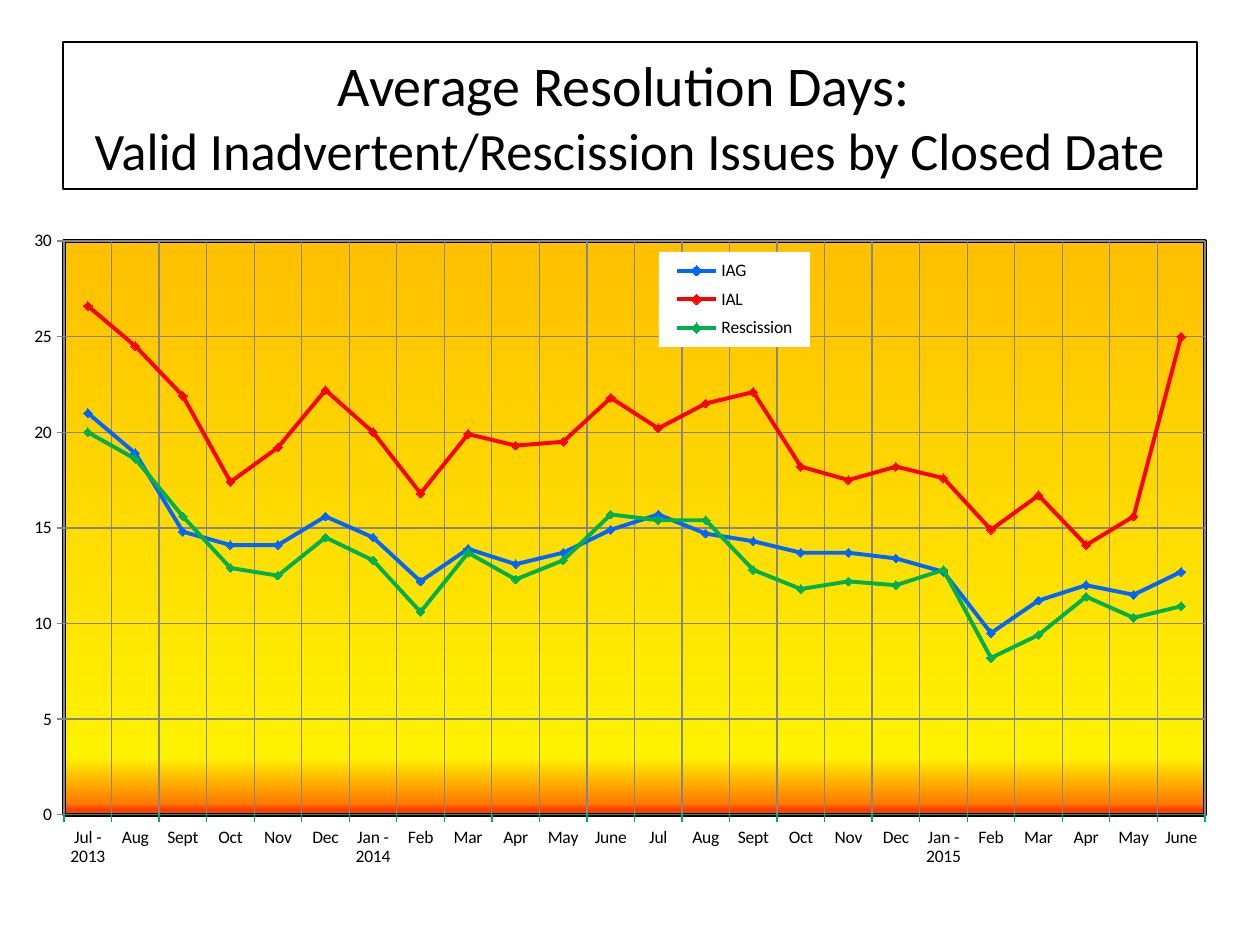
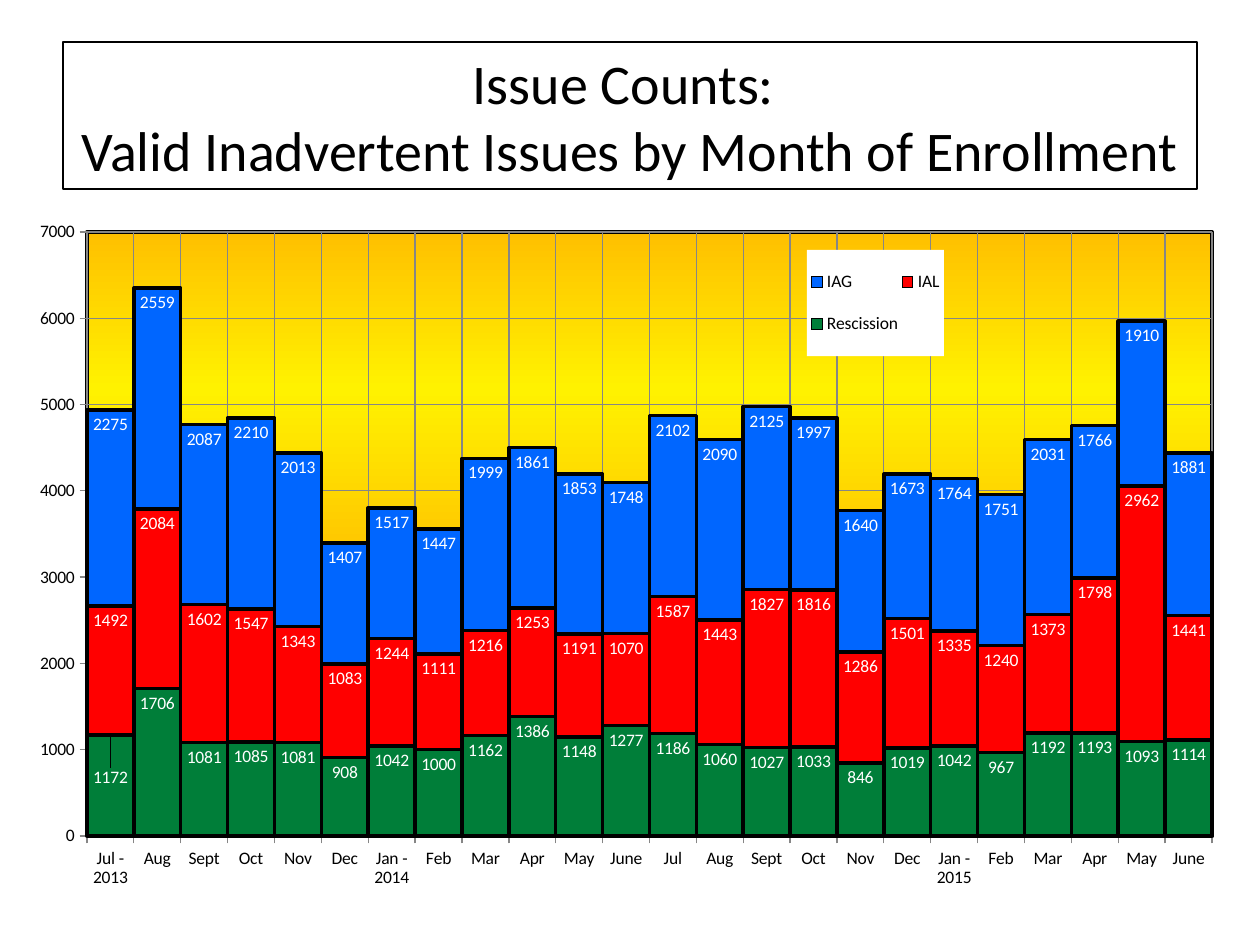
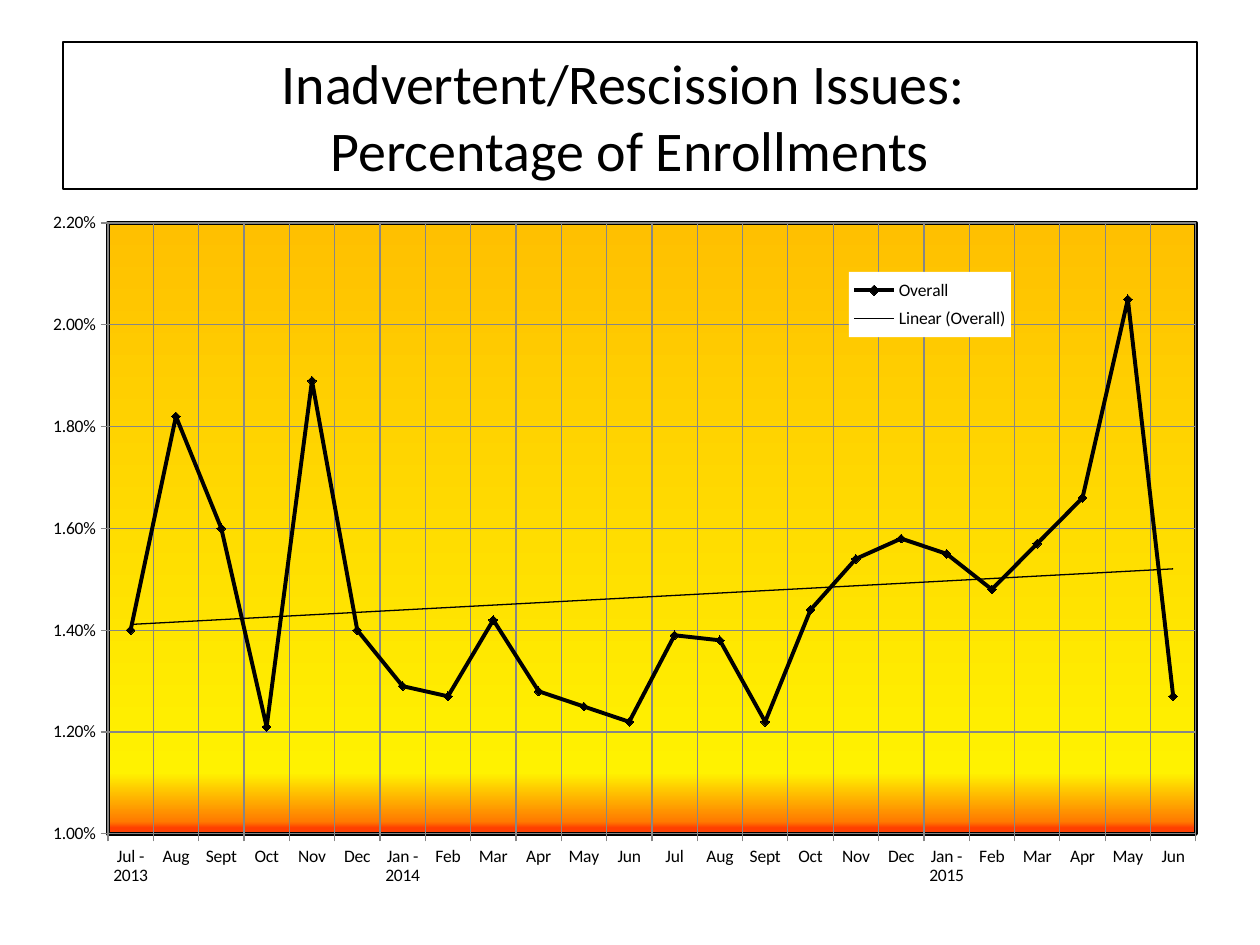
import copy

import pptx
import pptx.chart.data
import pptx.dml.color
import pptx.enum.chart
import pptx.enum.text
import pptx.oxml
import pptx.oxml.ns
import pptx.util

AUTUMN = ["Aug", "Sept", "Oct", "Nov", "Dec"]
SPRING = ["Feb", "Mar", "Apr", "May"]

IAG_BLUE = "0066FF"
IAL_RED = "FF0000"

AVERAGE_DAYS = [
    ("IAG", IAG_BLUE, [21, 18.9, 14.8, 14.1, 14.1, 15.6, 14.5, 12.2, 13.9, 13.1, 13.7, 14.9,
                       15.7, 14.7, 14.3, 13.7, 13.7, 13.4, 12.7, 9.5, 11.2, 12, 11.5, 12.7]),
    ("IAL", IAL_RED, [26.6, 24.5, 21.9, 17.4, 19.2, 22.2, 20, 16.8, 19.9, 19.3, 19.5, 21.8,
                      20.2, 21.5, 22.1, 18.2, 17.5, 18.2, 17.6, 14.9, 16.7, 14.1, 15.6, 25]),
    ("Rescission", "00B050", [20, 18.6, 15.6, 12.9, 12.5, 14.5, 13.3, 10.6, 13.7, 12.3, 13.3, 15.7,
                              15.4, 15.4, 12.8, 11.8, 12.2, 12, 12.8, 8.2, 9.4, 11.4, 10.3, 10.9]),
]
ISSUE_COUNTS = [
    ("Rescission", "007E39", [1172, 1706, 1081, 1085, 1081, 908, 1042, 1000, 1162, 1386, 1148, 1277,
                              1186, 1060, 1027, 1033, 846, 1019, 1042, 967, 1192, 1193, 1093, 1114]),
    ("IAL", IAL_RED, [1492, 2084, 1602, 1547, 1343, 1083, 1244, 1111, 1216, 1253, 1191, 1070,
                      1587, 1443, 1827, 1816, 1286, 1501, 1335, 1240, 1373, 1798, 2962, 1441]),
    ("IAG", IAG_BLUE, [2275, 2559, 2087, 2210, 2013, 1407, 1517, 1447, 1999, 1861, 1853, 1748,
                       2102, 2090, 2125, 1997, 1640, 1673, 1764, 1751, 2031, 1766, 1910, 1881]),
]
ENROLLMENT_SHARE = [
    ("Overall", "000000", [0.0140, 0.0182, 0.0160, 0.0121, 0.0189, 0.0140, 0.0129, 0.0127,
                           0.0142, 0.0128, 0.0125, 0.0122, 0.0139, 0.0138, 0.0122, 0.0144,
                           0.0154, 0.0158, 0.0155, 0.0148, 0.0157, 0.0166, 0.0205, 0.0127]),
]


def months(june):
    return ["Jul - 2013", *AUTUMN, "Jan - 2014", *SPRING, june,
            "Jul", *AUTUMN, "Jan - 2015", *SPRING, june]


def rgb(value):
    return pptx.dml.color.RGBColor.from_string(value)


def px(length):
    return round(length * 914400 / 126)


def qn(tag):
    return pptx.oxml.ns.qn(tag)


def xml(tag, body):
    return pptx.oxml.parse_xml(f"<{tag} {pptx.oxml.ns.nsdecls('c', 'a')}>{body}</{tag}>")


def solid(color):
    return f'<a:solidFill><a:srgbClr val="{color}"/></a:solidFill>'


class Deck:
    font = "Calibri"
    ink = "000000"
    paper = "FFFFFF"
    grid = "868686"

    def __init__(self):
        self.presentation = pptx.Presentation()
        self.presentation.slide_width = px(1260)
        self.presentation.slide_height = px(945)
        self.slide = None

    def add_slide(self, heading, subject, subject_size=32):
        self.slide = self.presentation.slides.add_slide(self.presentation.slide_layouts[5])
        title = self.slide.shapes.title
        title.left, title.top, title.width, title.height = map(px, (63, 42, 1134, 147))
        self.outline(title.line, self.ink, 0.75)
        frame = title.text_frame
        frame.text = f"{heading} \v{subject}"
        frame.word_wrap = True
        frame.auto_size = pptx.enum.text.MSO_AUTO_SIZE.NONE
        frame.vertical_anchor = pptx.enum.text.MSO_ANCHOR.MIDDLE
        paragraph = frame.paragraphs[0]
        paragraph.alignment = pptx.enum.text.PP_ALIGN.CENTER
        for run, size in zip(paragraph.runs, (32, subject_size)):
            self.style_font(run.font, size, self.ink)
        line_break = paragraph._p.find(qn("a:br"))
        line_break.append(copy.deepcopy(paragraph.runs[0]._r.find(qn("a:rPr"))))

    def style_font(self, font, size, color):
        font.name = self.font
        font.size = pptx.util.Pt(size)
        font.color.rgb = rgb(color)

    def outline(self, line, color, width):
        line.color.rgb = rgb(color)
        line.width = pptx.util.Pt(width)

    def add_chart(self, kind, box, plot_box, legend_box, categories, series,
                  scale, number_format="General", yellow_stop=90, axis_color=None):
        data = pptx.chart.data.CategoryChartData(number_format=number_format)
        data.categories = categories
        for name, _, values in series:
            data.add_series(name, values)
        chart = self.slide.shapes.add_chart(kind, *map(px, box), data).chart
        chart.has_title = False
        self.style_font(chart.font, 10, self.ink)
        chart.plots[0].vary_by_categories = False
        self.style_axes(chart, scale, number_format, axis_color or self.grid)
        self.style_plot_area(chart, box, plot_box, yellow_stop)
        self.add_legend(chart, box, legend_box)
        return chart

    def style_axes(self, chart, scale, number_format, axis_color):
        value_axis = chart.value_axis
        value_axis.minimum_scale, value_axis.maximum_scale, value_axis.major_unit = scale
        value_axis.tick_labels.number_format = number_format
        value_axis.tick_labels.number_format_is_linked = False
        for axis, color in ((value_axis, self.grid), (chart.category_axis, axis_color)):
            axis.has_major_gridlines = True
            axis.major_tick_mark = pptx.enum.chart.XL_TICK_MARK.OUTSIDE
            axis.minor_tick_mark = pptx.enum.chart.XL_TICK_MARK.NONE
            self.outline(axis.major_gridlines.format.line, self.grid, 0.75)
            self.outline(axis.format.line, color, 0.75)

    def layout(self, box, inner_box, target=""):
        left, top, width, height = box
        x, y, w, h = inner_box
        fractions = {"x": (x - left) / width, "y": (y - top) / height,
                     "w": w / width, "h": h / height}
        places = "".join(f'<c:{key} val="{value:.4f}"/>' for key, value in fractions.items())
        modes = '<c:xMode val="edge"/><c:yMode val="edge"/>'
        return xml("c:layout", f"<c:manualLayout>{target}{modes}{places}</c:manualLayout>")

    def drop_layout(self, parent):
        for old_layout in parent.findall(qn("c:layout")):
            parent.remove(old_layout)

    def style_plot_area(self, chart, box, plot_box, yellow_stop):
        area = chart.element.find(".//" + qn("c:plotArea"))
        self.drop_layout(area)
        area.insert(0, self.layout(box, plot_box, '<c:layoutTarget val="inner"/>'))
        stops = ((0, "FFC000"), (yellow_stop, "FFF200"), (98, "FF7A00"), (99, "FF3F00"))
        gradient = "".join(f'<a:gs pos="{stop * 1000}"><a:srgbClr val="{color}"/></a:gs>'
                           for stop, color in stops)
        area.append(xml("c:spPr", f'<a:gradFill><a:gsLst>{gradient}</a:gsLst>'
                                  f'<a:lin ang="5400000" scaled="0"/></a:gradFill>'
                                  f'<a:ln w="28575">{solid(self.ink)}</a:ln>'))

    def add_legend(self, chart, box, legend_box):
        chart.has_legend = True
        legend = chart.legend
        legend.position = pptx.enum.chart.XL_LEGEND_POSITION.RIGHT
        legend.include_in_layout = False
        self.style_font(legend.font, 10, self.ink)
        element = legend._element
        self.drop_layout(element)
        overlay = element.find(qn("c:overlay"))
        overlay.addprevious(self.layout(box, legend_box))
        overlay.addnext(xml("c:spPr", solid(self.paper)))

    def add_line_chart(self, box, plot_box, legend_box, categories, series, scale, **options):
        chart = self.add_chart(pptx.enum.chart.XL_CHART_TYPE.LINE_MARKERS, box, plot_box,
                               legend_box, categories, series, scale, **options)
        for trace, (_, color, _) in zip(chart.series, series):
            trace.smooth = False
            self.outline(trace.format.line, color, 2.25)
            marker = trace.marker
            marker.style = pptx.enum.chart.XL_MARKER_STYLE.DIAMOND
            marker.size = 5
            marker.format.fill.solid()
            marker.format.fill.fore_color.rgb = rgb(color)
            self.outline(marker.format.line, color, 0.75)
        return chart

    def add_trend(self, trace):
        trend = xml("c:trendline", f'<c:spPr><a:ln w="9525">{solid(self.ink)}</a:ln></c:spPr>'
                                   '<c:trendlineType val="linear"/>'
                                   '<c:dispRSqr val="0"/><c:dispEq val="0"/>')
        trace._element.find(qn("c:cat")).addprevious(trend)

    def add_stacked_chart(self, box, plot_box, legend_box, categories, series, scale, **options):
        chart = self.add_chart(pptx.enum.chart.XL_CHART_TYPE.COLUMN_STACKED, box, plot_box,
                               legend_box, categories, series, scale, **options)
        chart.plots[0].gap_width = 0
        chart.plots[0].overlap = 100
        for stack, (_, color, _) in zip(chart.series, series):
            stack.format.fill.solid()
            stack.format.fill.fore_color.rgb = rgb(color)
            self.outline(stack.format.line, self.ink, 2)
            labels = stack.data_labels
            labels.show_value = True
            labels.position = pptx.enum.chart.XL_LABEL_POSITION.INSIDE_END
            self.style_font(labels.font, 10, self.paper)
        return chart

    def shift_label(self, point, x, y):
        label = point.data_label
        self.style_font(label.font, 10, self.paper)
        label.position = pptx.enum.chart.XL_LABEL_POSITION.INSIDE_END
        element = label._dLbl
        self.drop_layout(element)
        shift = f'<c:manualLayout><c:x val="{x}"/><c:y val="{y}"/></c:manualLayout>'
        element.find(qn("c:idx")).addnext(xml("c:layout", shift))


def main():
    deck = Deck()

    deck.add_slide("Average Resolution Days:",
                   "Valid Inadvertent/Rescission Issues by Closed Date", 30)
    deck.add_line_chart((21, 210, 1216, 693), (64, 241, 1141, 574), (659, 252, 151, 95),
                        months("June"), AVERAGE_DAYS, (0, 30, 5), axis_color="00B050")

    deck.add_slide("Issue Counts:", "Valid Inadvertent Issues by Month of Enrollment")
    counts = deck.add_stacked_chart((32, 210, 1207, 703), (87, 232, 1125, 604),
                                    (807, 250, 137, 106), months("June"), ISSUE_COUNTS,
                                    (0, 7000, 1000), yellow_stop=26)
    deck.shift_label(counts.series[0].points[0], 0, 0.04)

    deck.add_slide("Inadvertent/Rescission Issues:", "Percentage of Enrollments")
    share = deck.add_line_chart((32, 199, 1184, 703), (108, 223, 1088, 611),
                                (849, 272, 162, 65), months("Jun"), ENROLLMENT_SHARE,
                                (0.01, 0.022, 0.002), number_format="0.00%")
    deck.add_trend(share.series[0])

    deck.presentation.save("out.pptx")


if __name__ == "__main__":
    main()
